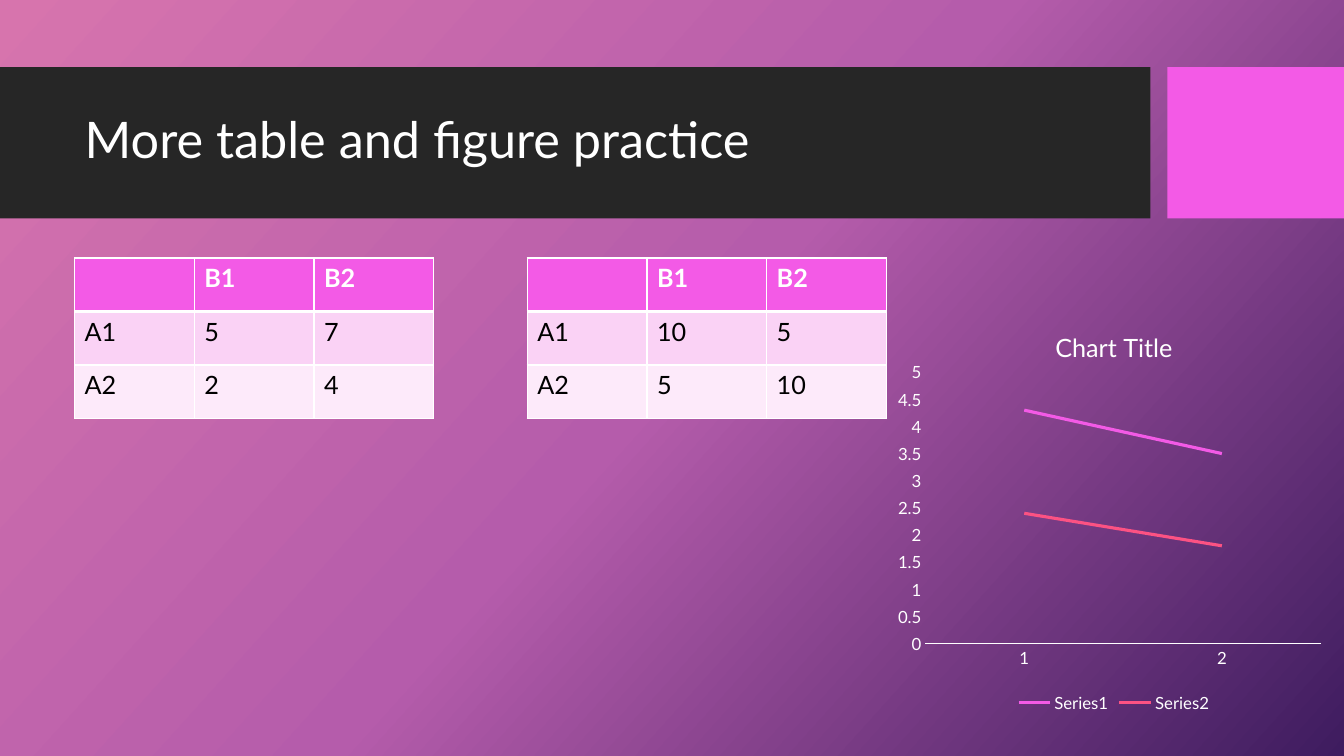
"""Builds a slide with two small tables and a line chart."""
from copy import deepcopy
from dataclasses import dataclass

from lxml import etree
from pptx import Presentation
from pptx.chart import data
from pptx.dml.color import RGBColor
from pptx.enum import chart as ch, shapes, text
from pptx.oxml import ns, parse_xml
from pptx.util import Pt


@dataclass(frozen=True)
class Theme:
    """Holds the colours, font and type sizes."""
    font: str = "Lato"
    white: str = "FFFFFF"
    black: str = "000000"
    band: str = "262626"
    pink: str = "F35AE6"
    coral: str = "FC5283"
    rows: tuple = ("F35AE6", "FAD2F5", "FDEAFA")
    back: tuple = ("D774AD", "B55CAB", "3E1C5F")
    title: int = 36
    body: int = 18
    label: int = 12


T = Theme()


def rgb(code):
    """Turns a hex code into a colour."""
    return RGBColor.from_string(code)


def style(font, size, color=T.white, bold=False):
    """Sets the face, size, colour and weight of a font."""
    font.name, font.size, font.bold = T.font, Pt(size), bold
    font.color.rgb = rgb(color)


def write(par, words, *look):
    """Adds one styled run to a paragraph."""
    run = par.add_run()
    run.text = words
    style(run.font, *look)


def paint(slide):
    """Fills the background with an even three-colour gradient."""
    fill = slide.background.fill
    fill.gradient()
    fill.gradient_angle = 360 - 42
    stops = slide.element.find(".//" + ns.qn("a:gsLst"))
    stops.insert(1, deepcopy(stops[0]))
    for i, (stop, color) in enumerate(zip(fill.gradient_stops, T.back)):
        stop.color.rgb = rgb(color)
        stop.position = i / 2


def block(slide, left, width, color):
    """Draws a plain rectangle in the title band."""
    box = slide.shapes.add_shape(
        shapes.MSO_SHAPE.RECTANGLE, Pt(left), Pt(48), Pt(width), Pt(108))
    box.shadow.inherit = False
    box.fill.solid()
    box.fill.fore_color.rgb = rgb(color)
    box.line.fill.background()


def head(slide, words):
    """Places the title over the band."""
    title = slide.shapes.title
    title.left, title.top = Pt(53.3), Pt(59)
    title.width, title.height = Pt(756.7), Pt(85)
    frame = title.text_frame
    frame.word_wrap = True
    frame.vertical_anchor = text.MSO_ANCHOR.MIDDLE
    par = frame.paragraphs[0]
    par.alignment = text.PP_ALIGN.LEFT
    par.line_spacing = 0.9
    write(par, words, T.title)


def edge(cell, side, width):
    """Draws one white border of a cell."""
    cell._tc.get_or_add_tcPr().append(parse_xml(
        f'<a:ln{side} {ns.nsdecls("a")} w="{Pt(width)}"><a:solidFill>'
        f'<a:srgbClr val="{T.white}"/></a:solidFill></a:ln{side}>'))


def grid(slide, left, rows):
    """Adds a table with a bold header row."""
    wide, high = 85.5, 38.2
    count = len(rows[0])
    table = slide.shapes.add_table(
        len(rows), count, Pt(left), Pt(184.3),
        Pt(wide * count), Pt(high * len(rows))).table
    for col in table.columns:
        col.width = Pt(wide)
    for r, row in enumerate(rows):
        table.rows[r].height = Pt(high)
        for c, words in enumerate(row):
            cell = table.cell(r, c)
            for side in "LRTB":
                rule = (r, side) in ((0, "B"), (1, "T"))
                edge(cell, side, 3 if rule else 1)
            cell.fill.solid()
            cell.fill.fore_color.rgb = rgb(T.rows[r])
            if words:
                write(cell.text_frame.paragraphs[0], words, T.body,
                      T.black if r else T.white, r == 0)


def place(chart, x, y, w, h):
    """Fixes the inner plot area as shares of the chart."""
    area = chart._chartSpace.find(".//" + ns.qn("c:plotArea"))
    for old in area.findall(ns.qn("c:layout")):
        area.remove(old)
    frame = etree.Element(ns.qn("c:layout"))
    inner = etree.SubElement(frame, ns.qn("c:manualLayout"))
    parts = dict(layoutTarget="inner", xMode="edge", yMode="edge",
                 x=x, y=y, w=w, h=h)
    for tag, val in parts.items():
        etree.SubElement(inner, ns.qn("c:" + tag), val=str(val))
    area.insert(0, frame)


def plot(slide, title, cats, lines):
    """Adds the line chart with its title and legend."""
    source = data.CategoryChartData()
    source.categories = cats
    for name, vals, _ in lines:
        source.add_series(name, vals)
    chart = slide.shapes.add_chart(
        ch.XL_CHART_TYPE.LINE, Pt(631.5), Pt(222.5), Pt(328.3), Pt(289.4),
        source).chart
    style(chart.font, T.label)
    chart.has_title = True
    write(chart.chart_title.text_frame.paragraphs[0], title, T.body)
    chart.chart_title.include_in_layout = False
    chart.has_legend = True
    chart.legend.position = ch.XL_LEGEND_POSITION.BOTTOM
    chart.legend.include_in_layout = False
    style(chart.legend.font, T.label)
    for axis in (chart.category_axis, chart.value_axis):
        axis.major_tick_mark = axis.minor_tick_mark = ch.XL_TICK_MARK.NONE
        axis.has_major_gridlines = False
        style(axis.tick_labels.font, T.label)
    base = chart.category_axis.format.line
    base.color.rgb, base.width = rgb(T.white), Pt(0.75)
    scale = chart.value_axis
    scale.minimum_scale, scale.maximum_scale, scale.major_unit = 0, 5, 0.5
    scale.tick_labels.number_format = "General"
    scale.tick_labels.number_format_is_linked = False
    scale.format.line.fill.background()
    chart.plots[0].vary_by_categories = False
    for item, (_, _, color) in zip(chart.plots[0].series, lines):
        item.smooth = False
        item.marker.style = ch.XL_MARKER_STYLE.NONE
        item.format.line.color.rgb = rgb(color)
        item.format.line.width = Pt(2.25)
    place(chart, 0.09, 0.15, 0.86, 0.67)


def main():
    """Builds and saves the slide."""
    deck = Presentation()
    deck.slide_width, deck.slide_height = Pt(960), Pt(540)
    slide = deck.slides.add_slide(deck.slide_layouts[5])
    paint(slide)
    block(slide, 0, 821.8, T.band)
    block(slide, 833.8, 126.2, T.pink)
    head(slide, "More table and figure practice")
    top = ("", "B1", "B2")
    grid(slide, 53.3, (top, ("A1", "5", "7"), ("A2", "2", "4")))
    grid(slide, 376.6, (top, ("A1", "10", "5"), ("A2", "5", "10")))
    plot(slide, "Chart Title", ("1", "2"), (
        ("Series1", (4.3, 3.5), T.pink), ("Series2", (2.4, 1.8), T.coral)))
    title = slide.shapes.title.element
    title.getparent().insert(4, title)
    deck.save("out.pptx")


if __name__ == "__main__":
    main()
